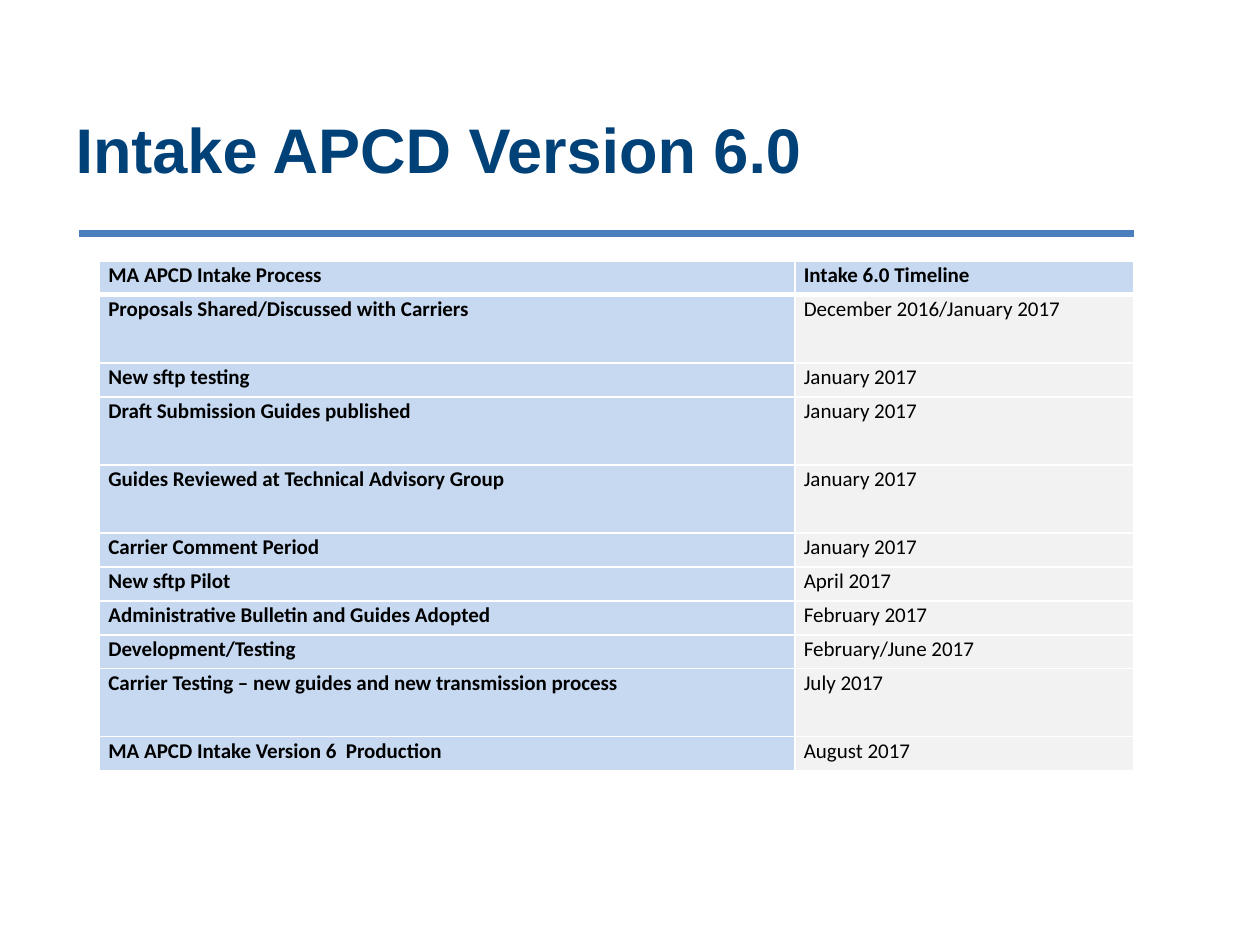
from pptx import Presentation
from pptx.dml.color import RGBColor as Rgb
from pptx.enum.text import MSO_ANCHOR as Anchor, PP_ALIGN as Align
from pptx.oxml import parse_xml
from pptx.oxml.ns import nsdecls
from pptx.util import Inches, Pt

HUES = {"title": "004178", "rule": "4B7EBC", "head": "C6D9F1",
        "date": "F2F2F2", "text": "000000", "edge": "FFFFFF"}
LOW, TALL = 0.27, 0.54
HEAD = ("MA APCD Intake Process", "Intake 6.0 Timeline")
STEPS = [
    ("Proposals Shared/Discussed with Carriers", "December 2016/January 2017", TALL),
    ("New sftp testing", "January 2017", LOW),
    ("Draft Submission Guides published", "January 2017", TALL),
    ("Guides Reviewed at Technical Advisory Group", "January 2017", TALL),
    ("Carrier Comment Period", "January 2017", LOW),
    ("New sftp Pilot", "April 2017", LOW),
    ("Administrative Bulletin and Guides Adopted", "February 2017", LOW),
    ("Development/Testing", "February/June 2017", LOW),
    ("Carrier Testing – new guides and new transmission process", "July 2017", TALL),
    ("MA APCD Intake Version 6  Production", "August 2017", LOW),
]


def write(frame, text, font="Calibri", size=12, hue="text", bold=False, space=None):
    para = frame.paragraphs[0]
    para.alignment = Align.LEFT
    para.line_spacing = space
    run = para.add_run()
    run.text = text
    run.font.name, run.font.size, run.font.bold = font, Pt(size), bold
    run.font.color.rgb = Rgb.from_string(HUES[hue])


class Deck:
    """Holds the style and the current slide, and draws each kind of element."""

    def __init__(self, wide, high):
        self.show = Presentation()
        self.show.slide_width, self.show.slide_height = Inches(wide), Inches(high)
        self.page = self.show.slides.add_slide(self.show.slide_layouts[5])

    def title(self, text, left, top, wide, high):
        box = self.page.shapes.title
        box.left, box.top = Inches(left), Inches(top)
        box.width, box.height = Inches(wide), Inches(high)
        box.text_frame.vertical_anchor = Anchor.MIDDLE
        write(box.text_frame, text, font="Arial", size=36, hue="title", bold=True)

    def rule(self, left, right, top):
        line = self.page.shapes.add_connector(
            1, Inches(left), Inches(top), Inches(right), Inches(top))
        line.line.color.rgb = Rgb.from_string(HUES["rule"])
        line.line.width = Pt(4)
        line._element.spPr.append(parse_xml(f"<a:effectLst {nsdecls('a')}/>"))

    def edges(self, cell, top, base):
        props = cell._tc.get_or_add_tcPr()
        for spot, (side, size) in enumerate(
                (("L", 1), ("R", 1), ("T", top), ("B", base))):
            props.insert(spot, parse_xml(
                f'<a:ln{side} {nsdecls("a")} w="{Pt(size)}"><a:solidFill>'
                f'<a:srgbClr val="{HUES["edge"]}"/></a:solidFill></a:ln{side}>'))

    def cell(self, cell, text, fill, bold, top, base):
        cell.margin_left = cell.margin_right = Inches(0.07)
        cell.margin_top = cell.margin_bottom = 0
        cell.fill.solid()
        cell.fill.fore_color.rgb = Rgb.from_string(HUES[fill])
        self.edges(cell, top, base)
        write(cell.text_frame, text, bold=bold, space=1.07)

    def table(self, rows, cols, left, top):
        high = sum(row[-1] for row in rows)
        grid = self.page.shapes.add_table(
            len(rows), len(cols), Inches(left), Inches(top),
            Inches(sum(cols)), Inches(high)).table
        for col, wide in zip(grid.columns, cols):
            col.width = Inches(wide)
        for r, (*texts, tall) in enumerate(rows):
            grid.rows[r].height = Inches(tall)
            for c, text in enumerate(texts):
                head = r == 0 or c == 0
                self.cell(grid.cell(r, c), text, "head" if head else "date", head,
                          3 if r == 1 else 1, 3 if r == 0 else 1)


def main():
    deck = Deck(10, 7.5)
    deck.rule(0.63, 9, 1.85)
    deck.title("Intake APCD Version 6.0", 0.5, 0.62, 8.5, 1.11)
    deck.table([(*HEAD, LOW), *STEPS], (5.52, 2.69), 0.79, 2.07)
    deck.show.save("out.pptx")


if __name__ == "__main__":
    main()
